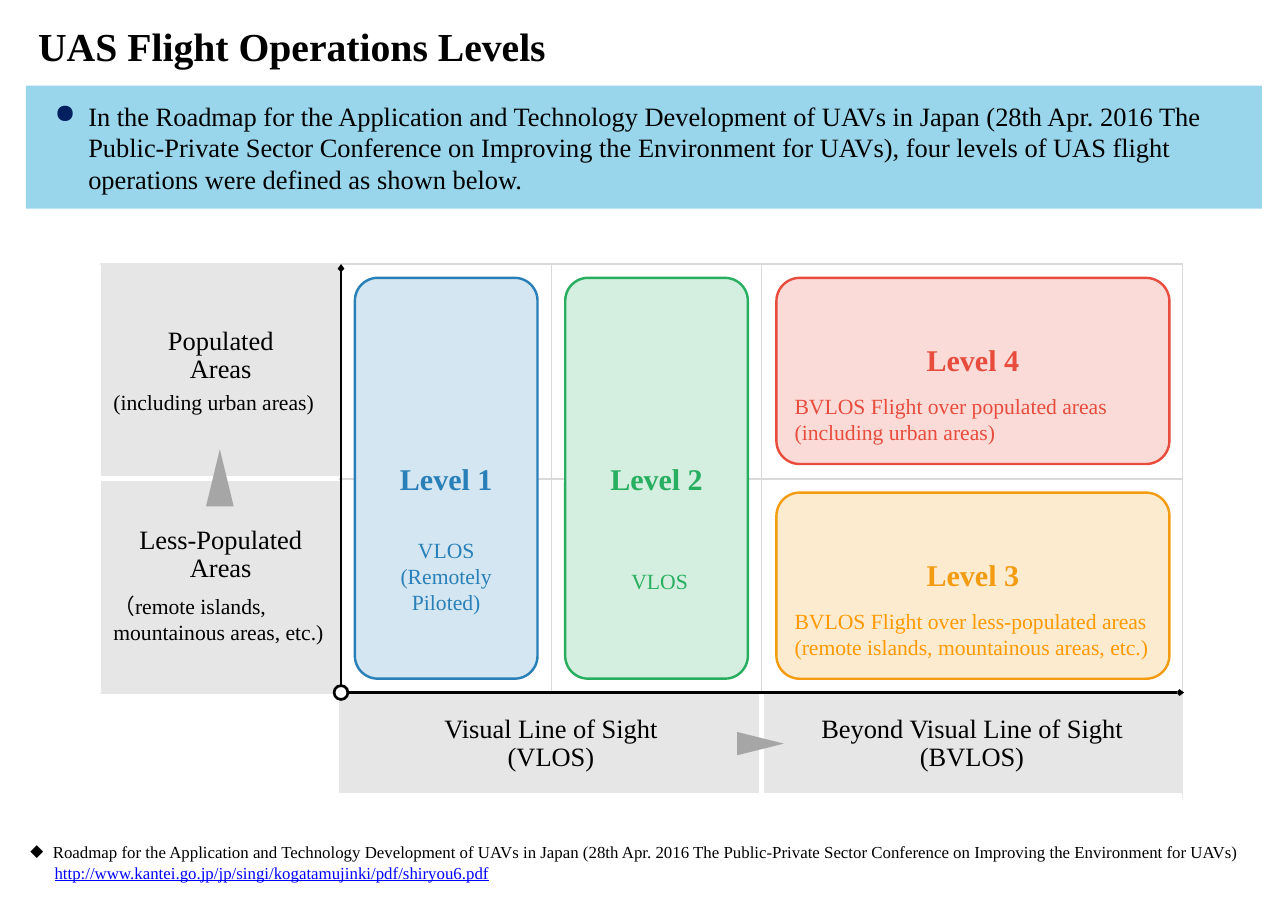
from dataclasses import dataclass

import pptx
import pptx.dml.color
import pptx.enum.shapes
import pptx.enum.text
import pptx.oxml.ns
import pptx.util
from lxml import etree
from pptx.util import Inches

SHAPE = pptx.enum.shapes.MSO_SHAPE
ALIGN = pptx.enum.text.PP_ALIGN
MIDDLE = pptx.enum.text.MSO_ANCHOR.MIDDLE
qn = pptx.oxml.ns.qn


@dataclass(frozen=True)
class Theme:
    font: str = "Times New Roman"
    title: int = 33
    level: int = 25
    body: int = 22
    detail: int = 18
    note: int = 14
    black: str = "000000"
    white: str = "FFFFFF"
    banner: str = "99D6EC"
    bullet: str = "002060"
    link: str = "0000FF"
    header: str = "E6E6E6"
    grid: str = "D9D9D9"
    marker: str = "A6A6A6"
    blue: tuple = ("2980B9", "D4E6F1")
    green: tuple = ("27AE60", "D4EFDF")
    orange: tuple = ("F39C12", "FDEBD0")
    red: tuple = ("E74C3C", "FADBD8")
    orange_text: str = "FF9900"


T = Theme()


def rgb(value):
    return pptx.dml.color.RGBColor.from_string(value)


def write(tf, text, size=T.body, color=T.black, bold=False, underline=False, align=ALIGN.LEFT,
          before=0, after=0, spacing=None, left=0, hang=0, bullet=None, bullet_color=T.black):
    """Add one paragraph, using the empty first one if there is one."""
    first = tf.paragraphs[0]
    p = first if not first.runs else tf.add_paragraph()
    p.alignment = align
    p.space_before, p.space_after = pptx.util.Pt(before), pptx.util.Pt(after)
    if spacing:
        p.line_spacing = spacing
    pPr = p._p.get_or_add_pPr()
    pPr.set("marL", str(Inches(left)))
    pPr.set("indent", str(-Inches(hang)))
    if bullet:
        color_el = etree.SubElement(pPr, qn("a:buClr"))
        etree.SubElement(color_el, qn("a:srgbClr"), val=bullet_color)
        etree.SubElement(pPr, qn("a:buChar"), char=bullet)
    r = p.add_run()
    r.text = text
    f = r.font
    f.name, f.size, f.bold, f.underline = T.font, pptx.util.Pt(size), bold, underline
    f.color.rgb = rgb(color)


def set_frame(tf, margins=(0.14, 0.07, 0.14, 0.07), wrap=True):
    tf.word_wrap = wrap
    tf.vertical_anchor = MIDDLE
    tf.margin_left, tf.margin_top, tf.margin_right, tf.margin_bottom = map(Inches, margins)


def add_text(s, box, **frame):
    tf = s.shapes.add_textbox(*map(Inches, box)).text_frame
    set_frame(tf, **frame)
    return tf


def add_block(s, kind, box, fill, line=None, width=2):
    sp = s.shapes.add_shape(kind, *map(Inches, box))
    sp.shadow.inherit = False
    sp.fill.solid()
    sp.fill.fore_color.rgb = rgb(fill)
    if line:
        sp.line.color.rgb = rgb(line)
        sp.line.width = pptx.util.Pt(width)
    else:
        sp.line.fill.background()
    return sp


def add_level(s, name, box, colors, bottom=0.07):
    line, fill = colors
    sp = add_block(s, SHAPE.ROUNDED_RECTANGLE, box, fill, line)
    sp.adjustments[0] = 0.125
    set_frame(sp.text_frame, (0.14, 0.07, 0.14, bottom))
    write(sp.text_frame, name, size=T.level, color=line, bold=True, align=ALIGN.CENTER)


def add_axis(s, x1, y1, x2, y2):
    c = s.shapes.add_connector(pptx.enum.shapes.MSO_CONNECTOR.STRAIGHT,
                               *map(Inches, (x1, y1, x2, y2)))
    c.line.color.rgb = rgb(T.black)
    c.line.width = pptx.util.Pt(2.25)
    etree.SubElement(c.line._get_or_add_ln(), qn("a:tailEnd"), type="arrow", w="sm", len="sm")
    etree.SubElement(c._element.spPr, qn("a:effectLst"))


def set_borders(cell, sides):
    """Draw the sides given as (colour, points); leave out those that are None."""
    tcPr = cell._tc.get_or_add_tcPr()
    for i, (tag, side) in enumerate(zip(("lnL", "lnR", "lnT", "lnB"), sides)):
        ln = etree.Element(qn(f"a:{tag}"))
        if side:
            ln.set("w", str(pptx.util.Pt(side[1])))
            fill = etree.SubElement(ln, qn("a:solidFill"))
            etree.SubElement(fill, qn("a:srgbClr"), val=side[0])
        else:
            etree.SubElement(ln, qn("a:noFill"))
        tcPr.insert(i, ln)


def add_area_table(s):
    widths, heights = (2.76, 2.44, 2.43, 4.86), (2.48, 2.48, 1.18)
    table = s.shapes.add_table(3, 4, *map(Inches, (1.17, 3.05, 12.49, 6.14))).table
    table.first_row = table.horz_banding = False
    for col, width in zip(table.columns, widths):
        col.width = Inches(width)
    for row, height in zip(table.rows, heights):
        row.height = Inches(height)
    table.cell(2, 1).merge(table.cell(2, 2))

    grid, edge, gap = (T.grid, 1.5), (T.header, 1.5), (T.white, 4.5)
    borders = {
        (0, 0): (edge, edge, edge, gap),
        (1, 0): (edge, edge, gap, edge),
        (2, 0): (None, edge, edge, None),
        (2, 1): (edge, gap, edge, gap),
        (2, 2): (edge, gap, edge, gap),
        (2, 3): (gap, edge, edge, gap),
    }
    headers = {
        (0, 0): (("Populated", "Areas"), "(including urban areas)"),
        (1, 0): (("Less-Populated Areas",), "（remote islands, mountainous areas, etc.)"),
        (2, 1): (("Visual Line of Sight", "(VLOS)"), None),
        (2, 3): (("Beyond Visual Line of Sight", "(BVLOS)"), None),
    }
    for r in range(3):
        for c in range(4):
            cell = table.cell(r, c)
            cell.fill.background()
            set_borders(cell, borders.get((r, c), (grid if c > 1 else edge, grid, grid,
                                                   grid if r == 0 else edge)))
    for place, (lines, detail) in headers.items():
        cell = table.cell(*place)
        cell.fill.solid()
        cell.fill.fore_color.rgb = rgb(T.header)
        cell.vertical_anchor = MIDDLE
        cell.margin_left = cell.margin_right = Inches(0.14)
        cell.margin_top = cell.margin_bottom = Inches(0.07)
        for line in lines:
            write(cell.text_frame, line, align=ALIGN.CENTER, spacing=0.95)
        if detail:
            write(cell.text_frame, detail, size=T.detail, before=6)


def main():
    prs = pptx.Presentation()
    prs.slide_width, prs.slide_height = Inches(14.88), Inches(10.5)
    s = prs.slides.add_slide(prs.slide_layouts[6])

    write(add_text(s, (0.3, 0.18, 14.28, 0.7)), "UAS Flight Operations Levels", size=T.title, bold=True)
    banner = add_block(s, SHAPE.RECTANGLE, (0.3, 0.99, 14.28, 1.42), T.banner)
    set_frame(banner.text_frame, (0.33, 0.07, 0.33, 0.07))
    write(banner.text_frame, "In the Roadmap for the Application and Technology Development of UAVs in Japan "
          "(28th Apr. 2016 The Public-Private Sector Conference on Improving the Environment for UAVs), "
          "four levels of UAS flight operations were defined as shown below.",
          left=0.39, hang=0.39, bullet="●", bullet_color=T.bullet)
    source = add_text(s, (0.24, 9.63, 14.28, 0.66), margins=(0.11, 0.05, 0.11, 0.05))
    write(source, "Roadmap for the Application and Technology Development of UAVs in Japan (28th Apr. 2016 "
          "The Public-Private Sector Conference on Improving the Environment for UAVs)",
          size=T.note, left=0.26, hang=0.26, bullet="◆")
    write(source, "http://www.kantei.go.jp/jp/singi/kogatamujinki/pdf/shiryou6.pdf",
          size=T.note, color=T.link, underline=True, left=0.28)

    add_area_table(s)
    add_level(s, "Level 1", (4.1, 3.21, 2.11, 4.63), T.blue)
    add_level(s, "Level 2", (6.53, 3.21, 2.11, 4.63), T.green)
    add_level(s, "Level 3", (8.97, 5.69, 4.54, 2.15), T.orange, bottom=0.33)
    add_level(s, "Level 4", (8.97, 3.21, 4.54, 2.15), T.red, bottom=0.33)

    add_axis(s, 3.94, 8, 3.94, 3.05)
    add_axis(s, 3.94, 8, 13.68, 8)
    add_block(s, SHAPE.OVAL, (3.86, 7.92, 0.16, 0.16), T.white, T.black, 2.25)
    add_block(s, SHAPE.ISOSCELES_TRIANGLE, (2.38, 5.19, 0.32, 0.66), T.marker)
    add_block(s, SHAPE.ISOSCELES_TRIANGLE, (8.65, 8.32, 0.27, 0.54), T.marker).rotation = 90

    vlos_remote = add_text(s, (4.21, 6.02, 1.89, 1.27))
    for line in ("VLOS", "(Remotely Piloted)"):
        write(vlos_remote, line, size=T.detail, color=T.blue[0], align=ALIGN.CENTER)
    write(add_text(s, (6.51, 5.91, 2.22, 1.6)), "VLOS", size=T.detail, color=T.green[0], align=ALIGN.CENTER)
    for top, color, text in (
            (4.51, T.red[0], "BVLOS Flight over populated areas (including urban areas)"),
            (6.99, T.orange_text, "BVLOS Flight over less-populated areas (remote islands, mountainous areas, etc.)")):
        write(add_text(s, (8.98, top, 4.54, 0.66), margins=(0.2, 0.07, 0.2, 0.07)), text,
              size=T.detail, color=color)

    prs.save("out.pptx")


if __name__ == "__main__":
    main()
